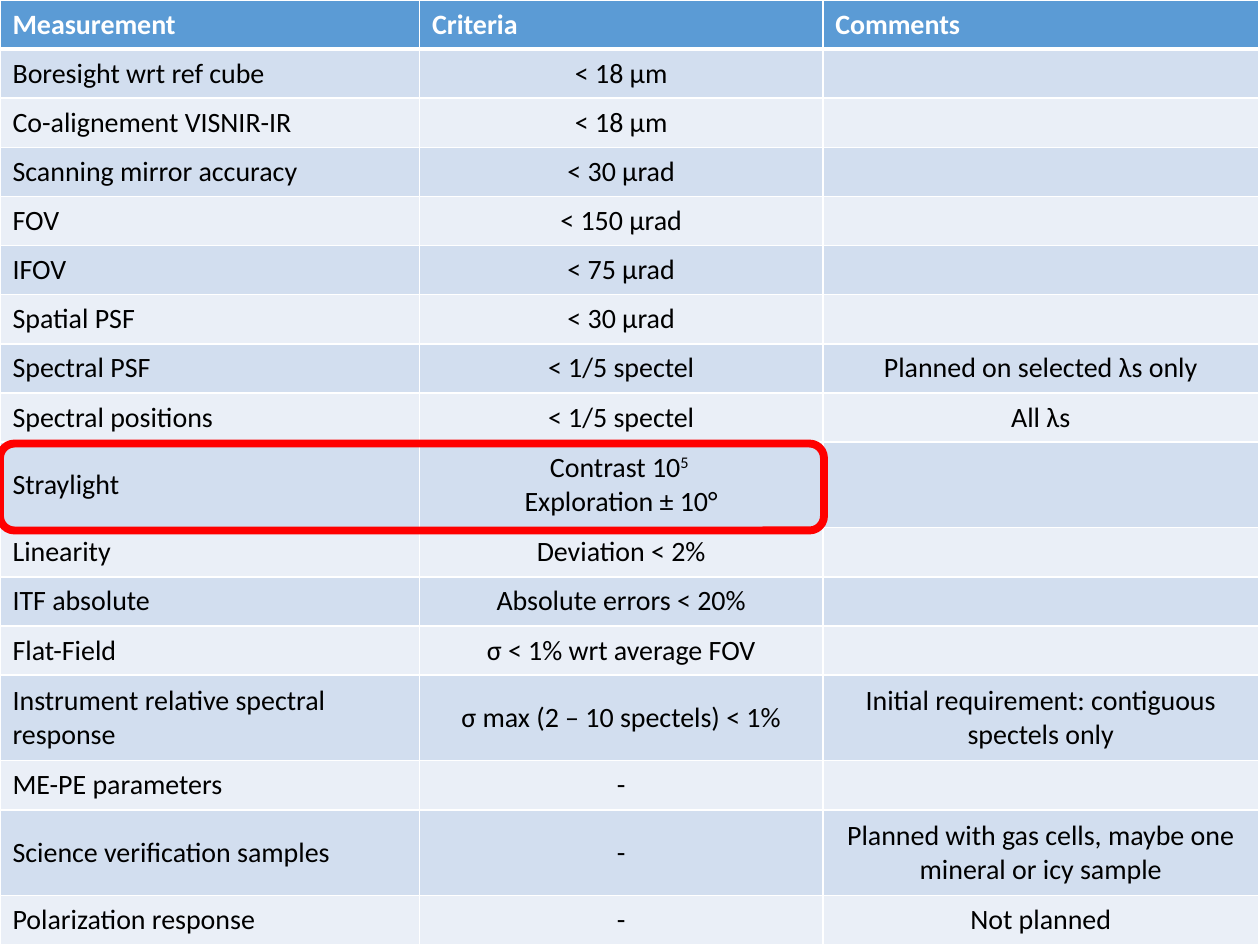
from dataclasses import dataclass

from lxml.etree import SubElement
from pptx import Presentation
from pptx.dml.color import RGBColor as Rgb
from pptx.enum.shapes import MSO_SHAPE as Kind
from pptx.enum.text import MSO_ANCHOR as Anchor, PP_ALIGN as Align
from pptx.oxml.ns import qn
from pptx.util import Inches, Pt


@dataclass(frozen=True)
class Theme:
    font: str = "Calibri"
    size: int = 16
    head: str = "5B9BD5"
    bands: tuple = ("EAEFF7", "D2DEEF")
    ink: str = "000000"
    white: str = "FFFFFF"
    mark: str = "FF0000"


@dataclass(frozen=True)
class Row:
    name: str
    limit: str
    note: str = ""
    high: float = 0.39


THEME = Theme()
WIDTHS = (3.33, 3.2, 3.46)
TALL = 0.68
ROWS = (
    Row("Measurement", "Criteria", "Comments"),
    Row("Boresight wrt ref cube", "< 18 µm"),
    Row("Co-alignement VISNIR-IR", "< 18 µm"),
    Row("Scanning mirror accuracy", "< 30 µrad"),
    Row("FOV", "< 150 µrad"),
    Row("IFOV", "< 75 µrad"),
    Row("Spatial PSF", "< 30 µrad"),
    Row("Spectral PSF", "< 1/5 spectel", "Planned on selected λs only"),
    Row("Spectral positions", "< 1/5 spectel", "All λs"),
    Row("Straylight", "Contrast 10^5 \nExploration ± 10°", high=TALL),
    Row("Linearity", "Deviation < 2%"),
    Row("ITF absolute", "Absolute errors < 20%"),
    Row("Flat-Field", "σ < 1% wrt average FOV"),
    Row("Instrument relative spectral response", "σ max (2 – 10 spectels) < 1%",
        "Initial requirement: contiguous spectels only", TALL),
    Row("ME-PE parameters", "-"),
    Row("Science verification samples", "-",
        "Planned with gas cells, maybe one mineral or icy sample", TALL),
    Row("Polarization response", "-", "Not planned"),
)


def write(frame, text: str, *, color: str, bold: bool = False, align=Align.LEFT) -> None:
    """Fill a text frame, one paragraph a line, raising what follows a caret."""
    for i, line in enumerate(text.split("\n")):
        para = frame.add_paragraph() if i else frame.paragraphs[0]
        para.alignment = align
        for j, part in enumerate(line.split("^") if line else ()):
            run = para.add_run()
            run.text = part
            font = run.font
            font.name, font.size, font.bold = THEME.font, Pt(THEME.size), bold
            font.color.rgb = Rgb.from_string(color)
            if j:
                run._r.get_or_add_rPr().set("baseline", "30000")
        SubElement(para._p, qn("a:endParaRPr"), sz=str(THEME.size * 100))


def edge(cell, side: str, width: float) -> None:
    """Draw one white border of a cell."""
    line = SubElement(cell._tc.get_or_add_tcPr(), qn(f"a:ln{side}"), w=str(Pt(width)))
    fill = SubElement(line, qn("a:solidFill"))
    SubElement(fill, qn("a:srgbClr"), val=THEME.white)


def draw_cell(cell, text: str, row: int, col: int) -> None:
    """Style and fill one table cell."""
    head = row == 0
    for side in "LRTB":
        thick = (head and side == "B") or (row == 1 and side == "T")
        edge(cell, side, 3 if thick else 1)
    cell.fill.solid()
    cell.fill.fore_color.rgb = Rgb.from_string(THEME.head if head else THEME.bands[row % 2])
    cell.vertical_anchor = Anchor.MIDDLE
    write(cell.text_frame, text, color=THEME.white if head else THEME.ink, bold=head,
          align=Align.CENTER if col and not head else Align.LEFT)


def draw_table(slide, rows: tuple) -> None:
    """Draw the table of measurements over the whole slide."""
    grid = slide.shapes.add_table(len(rows), len(WIDTHS), 0, 0, Inches(10), Inches(7.5)).table
    for col, wide in zip(grid.columns, WIDTHS):
        col.width = Inches(wide)
    for r, row in enumerate(rows):
        grid.rows[r].height = Inches(row.high)
        for c, text in enumerate((row.name, row.limit, row.note)):
            draw_cell(grid.cell(r, c), text, r, c)


def draw_mark(slide, left: float, top: float, wide: float, high: float) -> None:
    """Draw a rounded red outline."""
    box = slide.shapes.add_shape(Kind.ROUNDED_RECTANGLE, *map(Inches, (left, top, wide, high)))
    box.shadow.inherit = False
    box.fill.background()
    box.line.color.rgb = Rgb.from_string(THEME.mark)
    box.line.width = Pt(4.5)


def main() -> None:
    """Build and save the slide."""
    deck = Presentation()
    deck.slide_width, deck.slide_height = Inches(10), Inches(7.5)
    slide = deck.slides.add_slide(deck.slide_layouts[6])
    draw_table(slide, ROWS)
    draw_mark(slide, 0, 3.52, 6.54, 0.69)
    deck.save("out.pptx")


if __name__ == "__main__":
    main()
